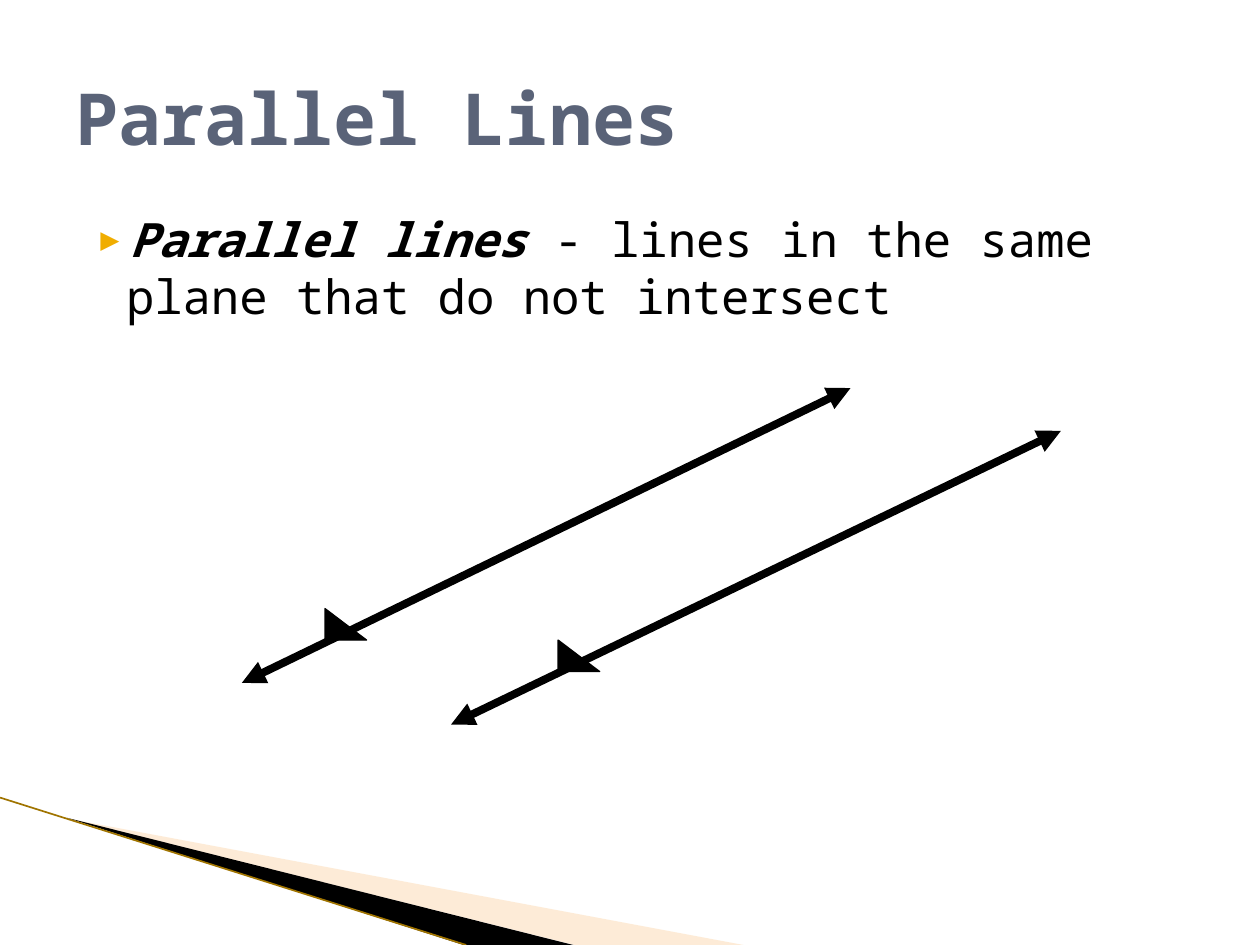
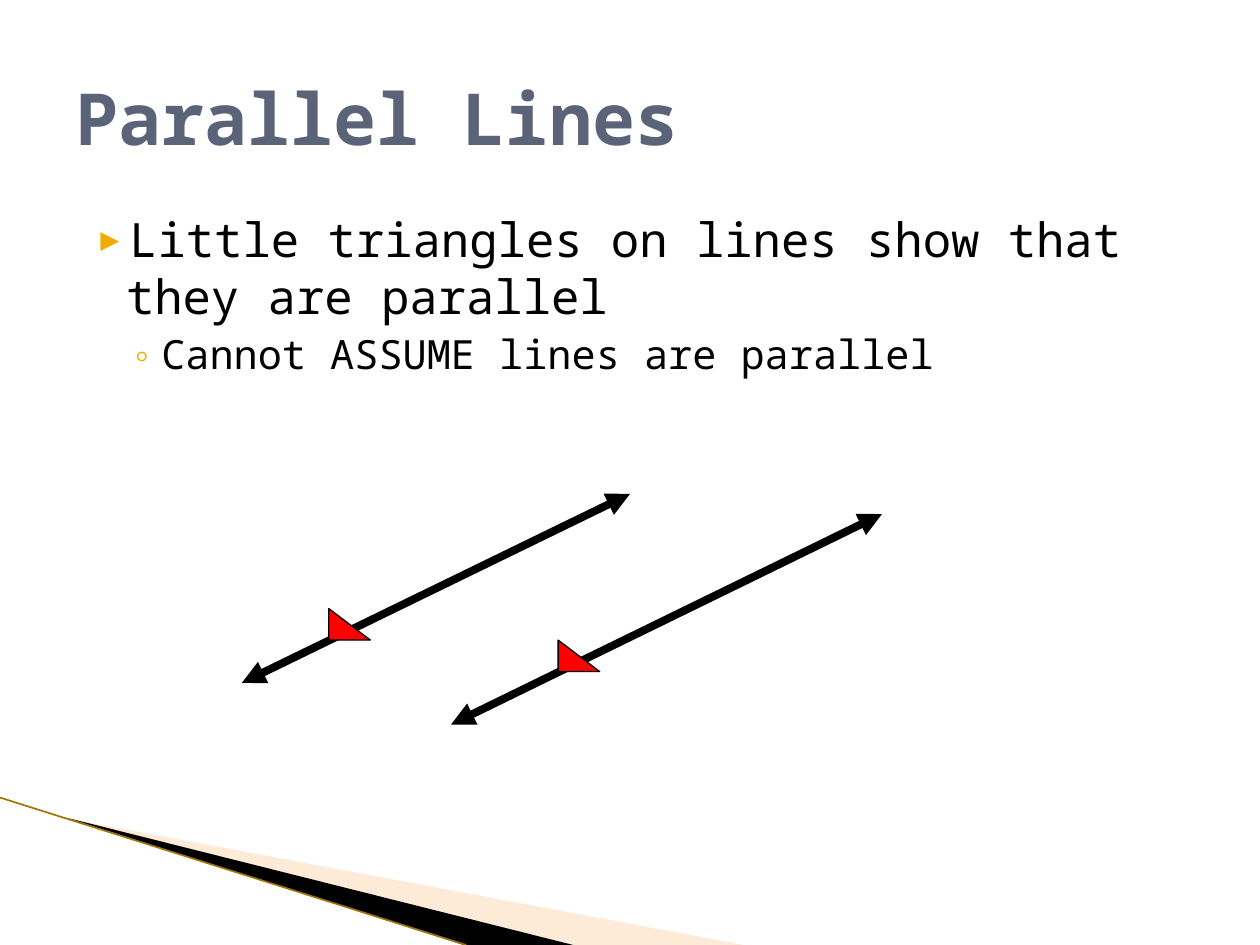
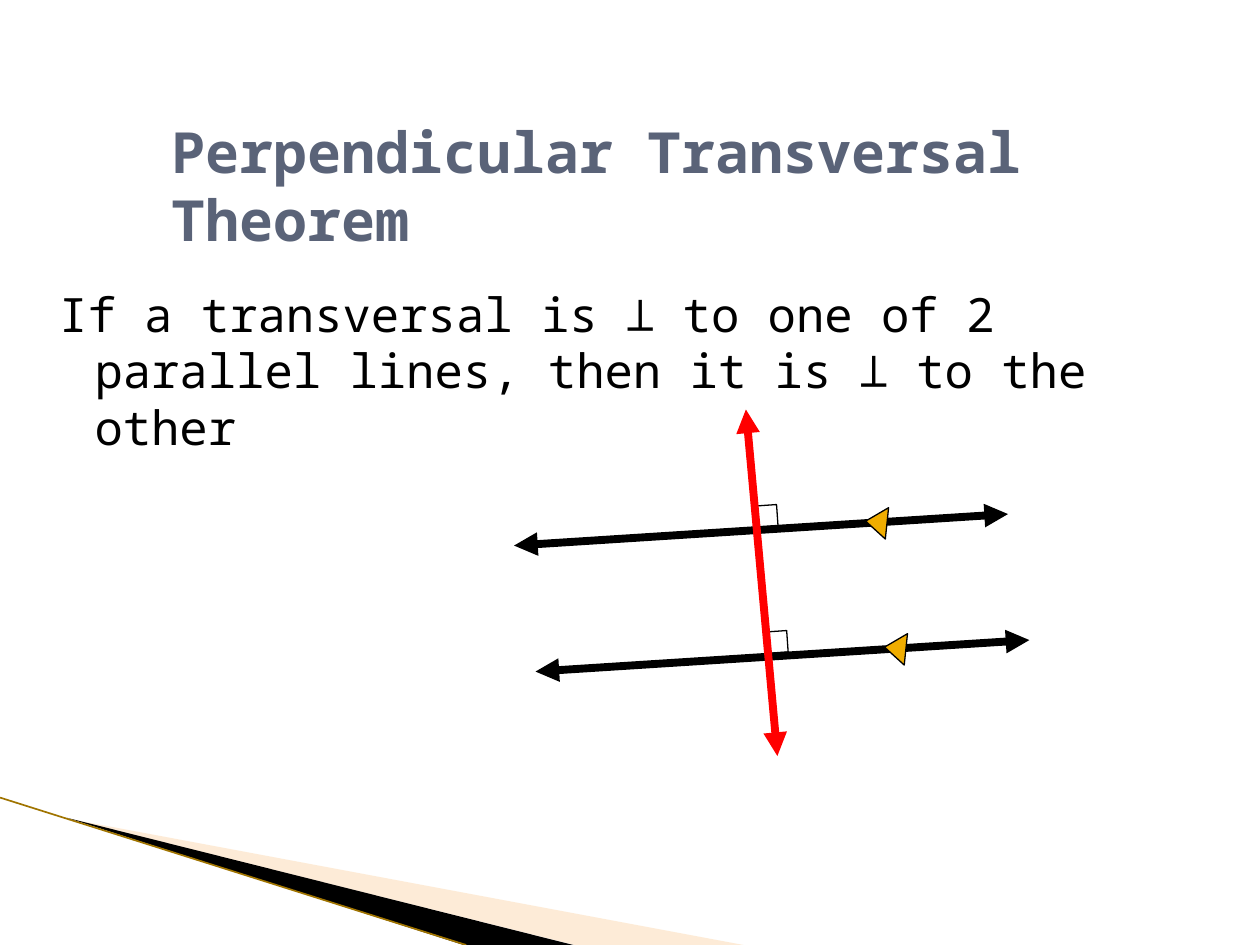
"""Build three geometry slides about parallel lines and transversals."""
import pptx
import pptx.dml.color
import pptx.enum.shapes
import pptx.enum.text
import pptx.oxml.ns
import pptx.util
from lxml import etree

Inches = pptx.util.Inches
Pt = pptx.util.Pt
RGBColor = pptx.dml.color.RGBColor
Shapes = pptx.enum.shapes.MSO_SHAPE
qualified = pptx.oxml.ns.qn

BLACK = RGBColor(0x00, 0x00, 0x00)
RED = RGBColor(0xFF, 0x00, 0x00)
GOLD = RGBColor(0xF0, 0xAD, 0x00)
DARK_GOLD = RGBColor(0xA0, 0x74, 0x00)
PEACH = RGBColor(0xFC, 0xCF, 0x9B)
SLATE = RGBColor(0x5A, 0x63, 0x78)
FONT = "Noto Sans Mono"

TITLE_BOX = (0.5, 0.3, 9, 1.25)
BODY_BOX = (0.5, 1.62, 9, 4.95)
PEACH_BAND = [(0.55, 6.5), (5.9, 7.5), (4.56, 7.5)]
BLACK_BAND = [(0.53, 6.49), (4.55, 7.5), (3.68, 7.5)]
LEVELS = [
    {"margin": 0.4, "indent": -0.28, "size": 27, "space": 4, "bullet": "▶", "percent": 68},
    {"margin": 0.68, "indent": -0.25, "size": 23, "space": 3.2, "bullet": "◦", "percent": 100},
]


class Deck:
    """Hold the shared style and the current slide."""

    def __init__(self):
        """Start an empty deck with the decorated layout."""
        self.presentation = pptx.Presentation()
        self.presentation.slide_width = Inches(10)
        self.presentation.slide_height = Inches(7.5)
        self.layout = self.presentation.slide_layouts[1]
        self.slide = None

    def add_slide(self):
        """Add a slide, decorating the layout the first time."""
        first = self.slide is None
        self.slide = self.presentation.slides.add_slide(self.layout)
        if first:
            self.decorate_layout()

    def decorate_layout(self):
        """Move the corner bands onto the shared layout."""
        decorations = [
            self.add_band(PEACH_BAND, PEACH, 40),
            self.add_band(BLACK_BAND, BLACK),
            self.add_line((0, 6.33), (3.7, 7.5), DARK_GOLD, 0.95, arrows=False),
        ]
        for position, shape in enumerate(decorations, start=2):
            self.layout.shapes.element.insert(position, shape.element)

    def add_band(self, points, color, opacity=100):
        """Draw a filled polygon without an outline."""
        corners = [(Inches(x), Inches(y)) for x, y in points]
        builder = self.slide.shapes.build_freeform(*corners[0])
        builder.add_line_segments(corners[1:])
        shape = builder.convert_to_shape()
        shape.shadow.inherit = False
        shape.fill.solid()
        shape.fill.fore_color.rgb = color
        shape.line.fill.background()
        if opacity < 100:
            fill = shape.element.spPr.find(qualified("a:solidFill"))
            etree.SubElement(fill[0], qualified("a:alpha"), val=str(opacity * 1000))
        return shape

    def add_line(self, start, end, color=BLACK, width=4.5, arrows=True):
        """Draw a straight line, with an arrowhead at both ends if wanted."""
        connector = self.slide.shapes.add_connector(
            pptx.enum.shapes.MSO_CONNECTOR.STRAIGHT,
            *[Inches(value) for value in (*start, *end)])
        connector.line.color.rgb = color
        connector.line.width = Pt(width)
        properties = connector.element.spPr
        if arrows:
            outline = properties.find(qualified("a:ln"))
            for end_name in ("a:headEnd", "a:tailEnd"):
                etree.SubElement(outline, qualified(end_name), type="triangle")
        etree.SubElement(properties, qualified("a:effectLst"))
        return connector

    def add_mark(self, kind, box, color=None, rotation=0):
        """Draw a small outlined marker, hollow when it has no colour."""
        shape = self.slide.shapes.add_shape(kind, *[Inches(value) for value in box])
        shape.shadow.inherit = False
        shape.rotation = rotation
        if color is None:
            shape.fill.background()
        else:
            shape.fill.solid()
            shape.fill.fore_color.rgb = color
        shape.line.color.rgb = BLACK
        shape.line.width = Pt(0.75)

    def place(self, shape, box, anchor):
        """Move a placeholder and fix its text layout."""
        shape.left, shape.top, shape.width, shape.height = [Inches(value) for value in box]
        frame = shape.text_frame
        frame.word_wrap = True
        frame.auto_size = pptx.enum.text.MSO_AUTO_SIZE.NONE
        frame.vertical_anchor = anchor
        return frame

    def set_title(self, text, box=TITLE_BOX, size=41):
        """Fill the title placeholder."""
        frame = self.place(self.slide.shapes.title, box, pptx.enum.text.MSO_ANCHOR.MIDDLE)
        frame.text = text
        paragraph = frame.paragraphs[0]
        paragraph.alignment = pptx.enum.text.PP_ALIGN.LEFT
        self.format_run(paragraph.runs[0], size, SLATE, bold=True)

    def set_body(self, items, box=BODY_BOX, bullets=True):
        """Fill the body with paragraphs, one level deeper each time."""
        frame = self.place(self.slide.placeholders[1], box, pptx.enum.text.MSO_ANCHOR.TOP)
        frame.text = "\n".join(items)
        for level, paragraph in enumerate(frame.paragraphs):
            style = LEVELS[level]
            paragraph.level = level
            self.add_bullet(paragraph, style, bullets)
            paragraph.space_before = Pt(style["space"] if level else 0)
            for run in paragraph.runs:
                self.format_run(run, style["size"], BLACK)
        return frame

    def add_bullet(self, paragraph, style, visible):
        """Set the hanging indent and the bullet of a paragraph."""
        properties = paragraph._p.get_or_add_pPr()
        properties.set("marL", str(Inches(style["margin"])))
        properties.set("indent", str(Inches(style["indent"])))
        if not visible:
            etree.SubElement(properties, qualified("a:buNone"))
            return
        color = etree.SubElement(properties, qualified("a:buClr"))
        etree.SubElement(color, qualified("a:srgbClr"), val=str(GOLD))
        etree.SubElement(properties, qualified("a:buSzPct"), val=str(style["percent"] * 1000))
        etree.SubElement(properties, qualified("a:buFont"), typeface=FONT)
        etree.SubElement(properties, qualified("a:buChar"), char=style["bullet"])

    def format_run(self, run, size, color, bold=False, italic=False):
        """Apply the deck font to a run."""
        run.font.name = FONT
        run.font.size = Pt(size)
        run.font.color.rgb = color
        run.font.bold = bold
        run.font.italic = italic

    def add_parallel_pair(self, ends, marker_lefts, marker_color):
        """Draw two slanted parallel lines and their triangle markers."""
        for start, end in zip([(1.92, 5.42), (3.58, 5.75)], ends):
            self.add_line(start, end)
        for left, top in zip(marker_lefts, (4.83, 5.08)):
            self.add_mark(Shapes.RIGHT_TRIANGLE, (left, top, 0.33, 0.25), marker_color)


def build_definition(deck):
    """Define parallel lines."""
    deck.add_slide()
    deck.set_title("Parallel Lines")
    frame = deck.set_body(["Parallel lines"])
    paragraph = frame.paragraphs[0]
    size = LEVELS[0]["size"]
    deck.format_run(paragraph.runs[0], size, BLACK, bold=True, italic=True)
    explanation = paragraph.add_run()
    explanation.text = " - lines in the same plane that do not intersect"
    deck.format_run(explanation, size, BLACK)
    deck.add_parallel_pair([(6.75, 3.08), (8.42, 3.42)], (2.58, 4.43), BLACK)


def build_notation(deck):
    """Show how parallel lines are marked."""
    deck.add_slide()
    deck.set_title("Parallel Lines")
    deck.set_body(["Little triangles on lines show that they are parallel",
                   "Cannot ASSUME lines are parallel"])
    deck.add_parallel_pair([(5, 3.92), (7, 4.08)], (2.61, 4.43), RED)


def build_theorem(deck):
    """State and draw the perpendicular transversal theorem."""
    deck.add_slide()
    deck.set_title("Perpendicular Transversal Theorem", (1.26, 1.01, 8.52, 0.91), 32.4)
    deck.set_body(["If a transversal is ⊥ to one of 2 parallel lines, then it is ⊥ to the other"],
                  (0.25, 2.21, 9.54, 1.38), bullets=False)
    for left, top in [(6, 4.01), (6.08, 5.01)]:
        deck.add_mark(Shapes.RECTANGLE, (left, top, 0.17, 0.17), rotation=356)
    for left, top in [(4.08, 4.33), (4.25, 5.33)]:
        deck.add_line((left, top), (left + 3.92, top - 0.25))
    deck.add_line((5.92, 3.25), (6.17, 6), RED)
    for left, top in [(6.83, 4.06), (6.98, 5.06)]:
        deck.add_mark(Shapes.ISOSCELES_TRIANGLE, (left, top, 0.25, 0.17), GOLD, 276)


def main():
    """Build and save the deck."""
    deck = Deck()
    build_definition(deck)
    build_notation(deck)
    build_theorem(deck)
    deck.presentation.save("out.pptx")


if __name__ == "__main__":
    main()
